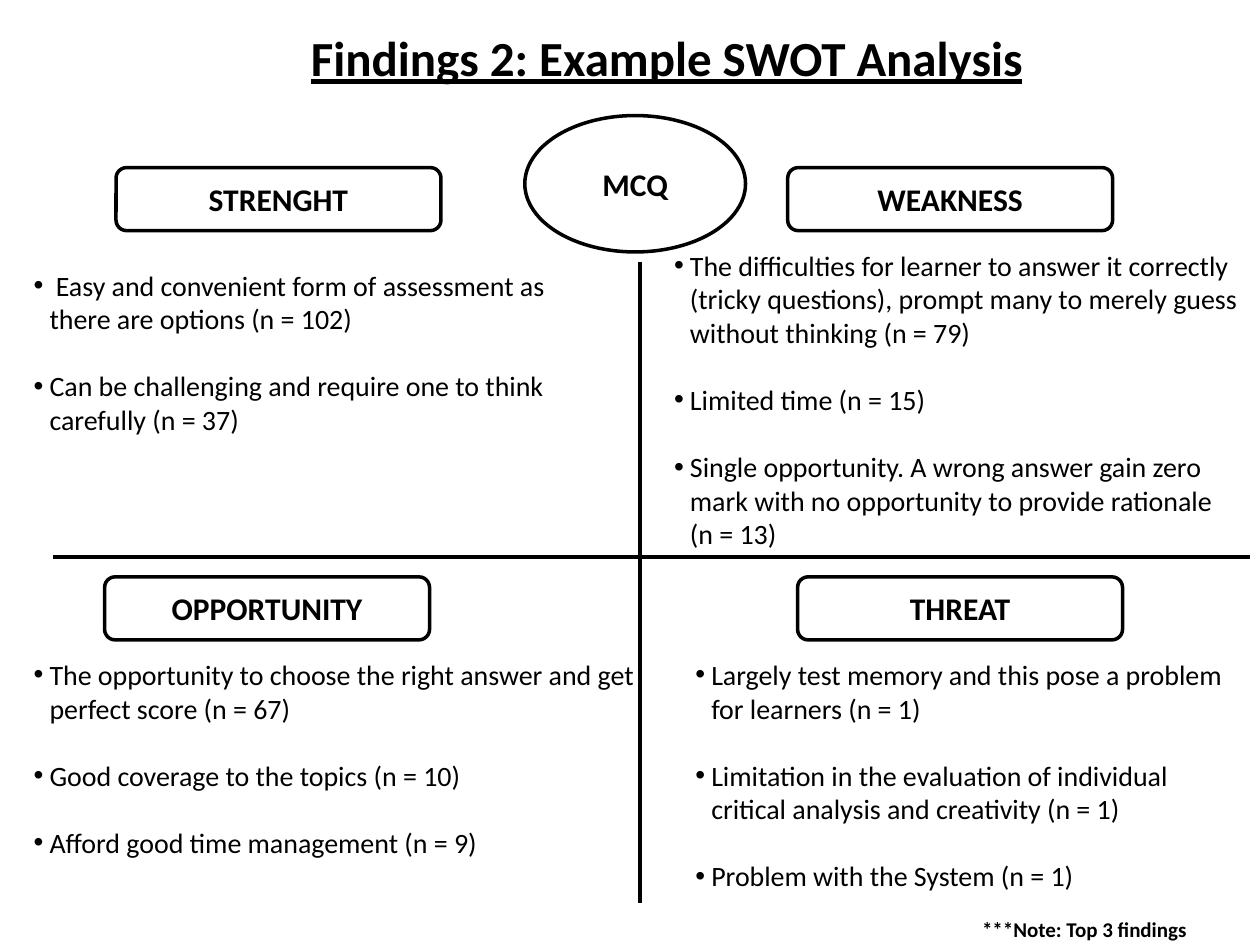
from lxml.etree import SubElement
from pptx import Presentation
from pptx.dml.color import RGBColor
from pptx.enum.shapes import MSO_CONNECTOR, MSO_SHAPE
from pptx.enum.text import MSO_ANCHOR, PP_ALIGN
from pptx.oxml.ns import qn
from pptx.util import Cm, Pt

BLACK = RGBColor(0, 0, 0)
FONT = "Calibri"
BULLET_INDENT = Cm(0.32)
HEADING_WIDTH, HEADING_HEIGHT = 6.55, 1.27

QUADRANTS = [
    ((0.43, 3.38, 12.07, 4.24), "STRENGHT", 1.91, 1.9, [
        "\u00a0Easy and convenient form of assessment as there are options (n = 102)",
        "Can be challenging and require one to think carefully (n = 37)",
    ]),
    ((13.34, 3.38, 12.06, 5.95), "WEAKNESS", 2.54, 1.5, [
        "The difficulties for learner to answer it correctly (tricky questions), "
        "prompt many to merely guess without thinking (n = 79)",
        "Limited time (n = 15)",
        "Single opportunity. A wrong answer gain zero mark with no opportunity "
        "to provide rationale\v(n = 13)",
    ]),
    ((0.43, 11.63, 12.7, 7), "OPPORTUNITY", 1.68, 1.5, [
        "The opportunity to choose the right answer and get perfect score (n = 67)",
        "Good coverage to the topics (n = 10)",
        "Afford good time management (n = 9)",
    ]),
    ((13.77, 11.63, 11.22, 5.74), "THREAT", 2.31, 1.5, [
        "Largely test memory and this pose a problem for learners (n = 1)",
        "Limitation in the evaluation of individual critical analysis and "
        "creativity (n = 1)",
        "Problem with the System (n = 1)",
    ]),
]


def style(paragraph, size, bold=False):
    font = paragraph.font
    font.name, font.size, font.bold = FONT, Pt(size), bold
    font.color.rgb = BLACK


def add_label(slide, box, preset, text, size=18, outlined=True):
    label = slide.shapes.add_shape(preset, *map(Cm, box))
    label.shadow.inherit = False
    label.fill.background()
    if outlined:
        label.line.color.rgb = BLACK
        label.line.width = Pt(2)
    else:
        label.line.fill.background()
    frame = label.text_frame
    frame.vertical_anchor = MSO_ANCHOR.MIDDLE
    paragraph = frame.paragraphs[0]
    paragraph.text = text
    paragraph.alignment = PP_ALIGN.CENTER
    style(paragraph, size, bold=True)


def add_title(slide, box, text):
    title = slide.shapes.title
    title.left, title.top, title.width, title.height = map(Cm, box)
    frame = title.text_frame
    frame.vertical_anchor = MSO_ANCHOR.TOP
    paragraph = frame.paragraphs[0]
    paragraph.text = text
    paragraph.alignment = PP_ALIGN.CENTER
    style(paragraph, 28, bold=True)
    paragraph.font.underline = True


def add_findings(slide, box, findings):
    frame = slide.shapes.add_textbox(*map(Cm, box)).text_frame
    frame.word_wrap = True
    for index, finding in enumerate(findings):
        paragraph = frame.add_paragraph() if index else frame.paragraphs[0]
        paragraph.text = finding
        paragraph.space_before = Pt(19.2 if index else 0)
        style(paragraph, 16)
        properties = paragraph._p.get_or_add_pPr()
        properties.set("marL", str(BULLET_INDENT))
        properties.set("indent", str(-BULLET_INDENT))
        bullet_font = SubElement(properties, qn("a:buFont"))
        bullet_font.set("typeface", "Arial")
        SubElement(properties, qn("a:buChar")).set("char", "•")
        properties.append(properties.find(qn("a:defRPr")))


def add_quadrant(slide, box, heading, heading_inset, findings_drop, findings):
    left, top, width, height = box
    add_label(slide, (left + heading_inset, top, HEADING_WIDTH, HEADING_HEIGHT),
              MSO_SHAPE.FLOWCHART_ALTERNATE_PROCESS, heading)
    add_findings(slide, (left, top + findings_drop, width, height - findings_drop),
                 findings)


def add_axes(slide, box, crossing_x, crossing_y):
    left, top, width, height = box
    middle = left + width / 2
    for ends in (
        (crossing_x, top, crossing_x, top + height),
        (left + width, crossing_y, middle, crossing_y),
        (middle, crossing_y, left, crossing_y),
    ):
        axis = slide.shapes.add_connector(MSO_CONNECTOR.STRAIGHT, *map(Cm, ends))
        axis.line.color.rgb = BLACK
        axis.line.width = Pt(2.25)
        SubElement(axis._element.spPr, qn("a:effectLst"))


def main():
    deck = Presentation()
    deck.slide_width, deck.slide_height = Cm(25.4), Cm(19.05)
    slide = deck.slides.add_slide(deck.slide_layouts[5])
    add_title(slide, (5.72, 0.43, 15.44, 1.45), "Findings 2: Example SWOT Analysis")
    add_axes(slide, (1.06, 5.29, 24.13, 12.92), 12.91, 11.22)
    add_label(slide, (10.58, 2.33, 4.45, 2.75), MSO_SHAPE.OVAL, "MCQ")
    for quadrant in QUADRANTS:
        add_quadrant(slide, *quadrant)
    add_label(slide, (18.42, 18.42, 6.98, 0.63), MSO_SHAPE.FLOWCHART_ALTERNATE_PROCESS,
              "***Note: Top 3 findings ", size=12, outlined=False)
    deck.save("out.pptx")


if __name__ == "__main__":
    main()
